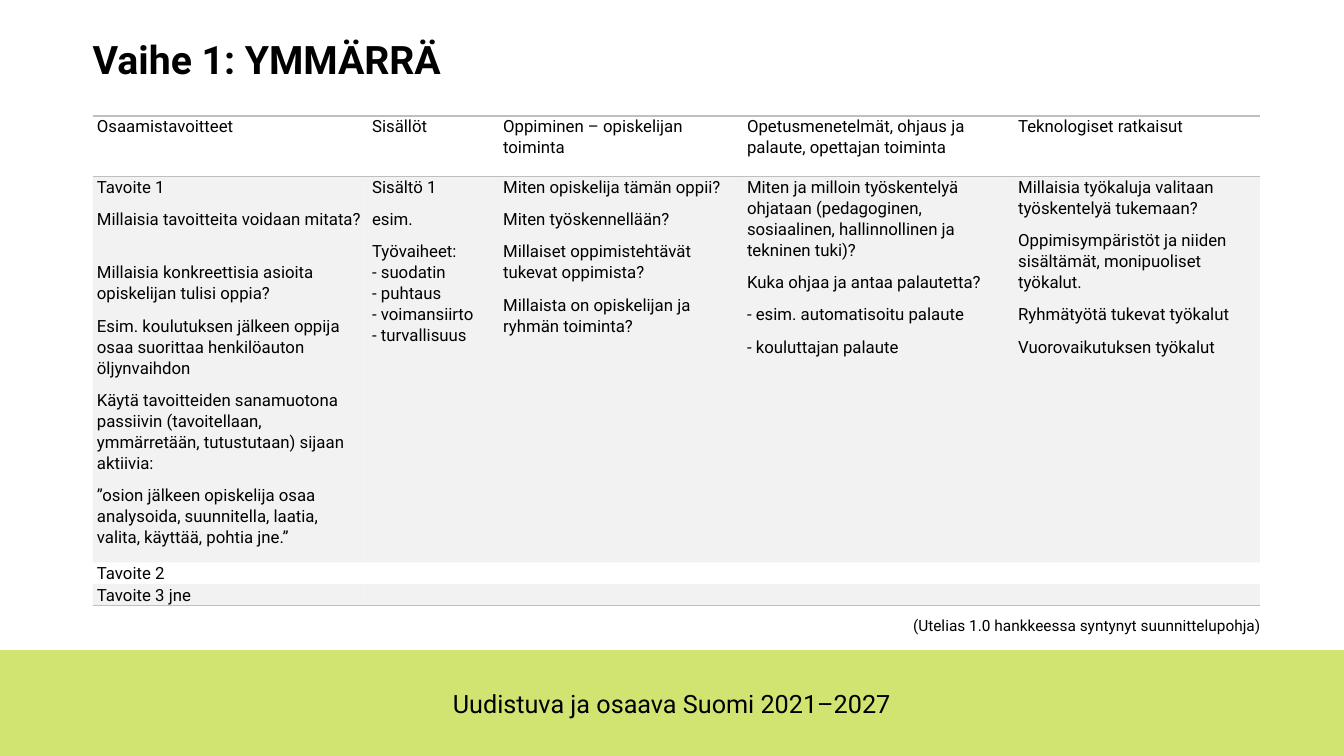
from dataclasses import dataclass

from lxml import etree
from pptx import Presentation
from pptx.dml.color import RGBColor
from pptx.enum.shapes import MSO_SHAPE
from pptx.enum.text import MSO_ANCHOR, PP_ALIGN
from pptx.oxml.ns import qn
from pptx.util import Pt

RECTANGLE = MSO_SHAPE.RECTANGLE
TOP, MIDDLE = MSO_ANCHOR.TOP, MSO_ANCHOR.MIDDLE
LEFT, CENTER = PP_ALIGN.LEFT, PP_ALIGN.CENTER

COLOURS = {"text": "000000", "band": "D1E371", "grey": "BFBFBF"}
FONT = "Roboto"
CELL_SIZE = 12
TITLE_ONLY = 5
PLAIN_TABLE_STYLE = "{2D5ABB26-0587-4C30-8999-92F81FD0307C}"
PAGE_WIDTH, PAGE_HEIGHT = 960, 540
MARGIN_LEFT = 66.24
ROW_HEIGHTS = (43.2, 275.76, 15.12, 15.12)
SHADED_ROWS = (1, 3)


@dataclass(frozen=True)
class Frame:
    left: float
    top: float
    width: float
    height: float

    def lengths(self) -> tuple:
        return Pt(self.left), Pt(self.top), Pt(self.width), Pt(self.height)


@dataclass(frozen=True)
class Column:
    width: float
    heading: str
    questions: tuple[str, ...]
    later_goals: tuple[str, str] = ("", "")

    def cell_texts(self) -> tuple:
        return ((self.heading,), self.questions, *((goal,) for goal in self.later_goals))


COLUMNS = (
    Column(196.56, "Osaamistavoitteet", (
        "Tavoite 1",
        "Millaisia tavoitteita voidaan mitata?",
        "Millaisia konkreettisia asioita opiskelijan tulisi oppia?",
        "Esim. koulutuksen jälkeen oppija osaa suorittaa henkilöauton öljynvaihdon",
        "Käytä tavoitteiden sanamuotona passiivin (tavoitellaan,\n"
        "ymmärretään, tutustutaan) sijaan aktiivia:",
        "”osion jälkeen opiskelija osaa analysoida, suunnitella, laatia, "
        "valita, käyttää, pohtia jne.”",
    ), ("Tavoite 2", "Tavoite 3 jne")),
    Column(93.6, "Sisällöt", (
        "Sisältö 1",
        "esim.",
        "Työvaiheet:\n- suodatin\n- puhtaus\n- voimansiirto\n- turvallisuus",
    )),
    Column(174.24, "Oppiminen – opiskelijan toiminta", (
        "Miten opiskelija tämän oppii?",
        "Miten työskennellään?",
        "Millaiset oppimistehtävät tukevat oppimista?",
        "Millaista on opiskelijan ja ryhmän toiminta?",
    )),
    Column(193.68, "Opetusmenetelmät, ohjaus ja palaute, opettajan toiminta", (
        "Miten ja milloin työskentelyä ohjataan (pedagoginen, sosiaalinen, "
        "hallinnollinen ja tekninen tuki)?",
        "Kuka ohjaa ja antaa palautetta?",
        "- esim. automatisoitu palaute",
        "- kouluttajan palaute",
    )),
    Column(175.68, "Teknologiset ratkaisut", (
        "Millaisia työkaluja valitaan työskentelyä tukemaan?",
        "Oppimisympäristöt ja niiden sisältämät, monipuoliset työkalut.",
        "Ryhmätyötä tukevat työkalut",
        "Vuorovaikutuksen työkalut",
    )),
)


def format_runs(para, size: float, bold: bool = False) -> None:
    for span in para.runs:
        span.font.name = FONT
        span.font.size = Pt(size)
        span.font.bold = bold
        span.font.color.rgb = RGBColor.from_string(COLOURS["text"])


def fill_text_box(box, text: str, size: float, inset: bool = False,
                  bold: bool = False, align=LEFT, anchor=TOP) -> None:
    text_frame = box.text_frame
    text_frame.text = text
    text_frame.word_wrap = True
    text_frame.vertical_anchor = anchor
    if not inset:
        text_frame.margin_left = text_frame.margin_right = 0
        text_frame.margin_top = text_frame.margin_bottom = 0
    para = text_frame.paragraphs[0]
    para.alignment = align
    format_runs(para, size, bold)


def size_breaks_and_empty_lines(para) -> None:
    """Give line breaks and empty paragraphs the cell font, so that rows keep their height."""
    element = para._p
    marks = [etree.SubElement(line_break, qn("a:rPr"))
             for line_break in element.findall(qn("a:br"))]
    if not para.runs:
        marks.append(etree.SubElement(element, qn("a:endParaRPr")))
    for mark in marks:
        mark.set("sz", str(CELL_SIZE * 100))
        etree.SubElement(mark, qn("a:latin"), typeface=FONT)


def fill_cell_text(cell, texts: tuple) -> None:
    cell.margin_left = cell.margin_right = Pt(3)
    cell.margin_top = cell.margin_bottom = 0
    text_frame = cell.text_frame
    for index, text in enumerate(texts):
        para = text_frame.add_paragraph() if index else text_frame.paragraphs[0]
        para.text = text
        para.line_spacing = 1.07
        para.space_after = Pt(8)
        format_runs(para, CELL_SIZE)
        size_breaks_and_empty_lines(para)


def shade_cell(cell, shaded: bool) -> None:
    if not shaded:
        cell.fill.background()
        return
    cell.fill.solid()
    cell.fill.fore_color.rgb = RGBColor.from_string(COLOURS["grey"])
    colour = cell._tc.tcPr.find(f"{qn('a:solidFill')}/{qn('a:srgbClr')}")
    etree.SubElement(colour, qn("a:alpha"), val="20000")


def draw_borders(cell, sides: tuple) -> None:
    properties = cell._tc.get_or_add_tcPr()
    for index, side in enumerate(sides):
        line = etree.Element(qn(f"a:{side}"), w=str(Pt(1)))
        fill = etree.SubElement(line, qn("a:solidFill"))
        etree.SubElement(fill, qn("a:srgbClr"), val=COLOURS["grey"])
        properties.insert(index, line)


def add_goal_table(page) -> None:
    frame = Frame(MARGIN_LEFT, 82.8, sum(column.width for column in COLUMNS), sum(ROW_HEIGHTS))
    graphic = page.shapes.add_table(len(ROW_HEIGHTS), len(COLUMNS), *frame.lengths())
    next(graphic.element.iter(qn("a:tableStyleId"))).text = PLAIN_TABLE_STYLE
    table = graphic.table
    table.first_row = table.horz_banding = False
    for row, height in zip(table.rows, ROW_HEIGHTS):
        row.height = Pt(height)
    borders = {0: ("lnT", "lnB"), len(ROW_HEIGHTS) - 1: ("lnB",)}
    for column_index, column in enumerate(COLUMNS):
        table.columns[column_index].width = Pt(column.width)
        for row_index, texts in enumerate(column.cell_texts()):
            cell = table.cell(row_index, column_index)
            fill_cell_text(cell, texts)
            shade_cell(cell, row_index in SHADED_ROWS)
            draw_borders(cell, borders.get(row_index, ()))
    # One extra line of space sets the measurable goals apart from the concrete ones.
    table.cell(1, 0).text_frame.paragraphs[1].space_after = Pt(23)


def add_footer_band(page) -> None:
    band = page.shapes.add_shape(RECTANGLE, *Frame(0, 464.4, PAGE_WIDTH, 75.6).lengths())
    band.shadow.inherit = False
    band.fill.solid()
    band.fill.fore_color.rgb = RGBColor.from_string(COLOURS["band"])
    band.line.fill.background()
    box = page.shapes.add_textbox(*Frame(234, 491.76, 491.76, 21.6).lengths())
    fill_text_box(box, "Uudistuva ja osaava Suomi 2021–2027", 18, align=CENTER, anchor=MIDDLE)


def add_title(page) -> None:
    title = page.shapes.title
    title.left, title.top, title.width, title.height = Frame(MARGIN_LEFT, 28.8, 828, 43.2).lengths()
    fill_text_box(title, "Vaihe 1: YMMÄRRÄ", 28, bold=True)
    title.text_frame.paragraphs[0].line_spacing = 0.9


def main() -> None:
    deck = Presentation()
    deck.slide_width, deck.slide_height = Pt(PAGE_WIDTH), Pt(PAGE_HEIGHT)
    page = deck.slides.add_slide(deck.slide_layouts[TITLE_ONLY])
    add_footer_band(page)
    add_title(page)
    add_goal_table(page)
    credit = page.shapes.add_textbox(*Frame(645.12, 436.32, 268.56, 20.88).lengths())
    fill_text_box(credit, "(Utelias 1.0 hankkeessa syntynyt suunnittelupohja)", 11, inset=True)
    deck.save("out.pptx")


if __name__ == "__main__":
    main()
